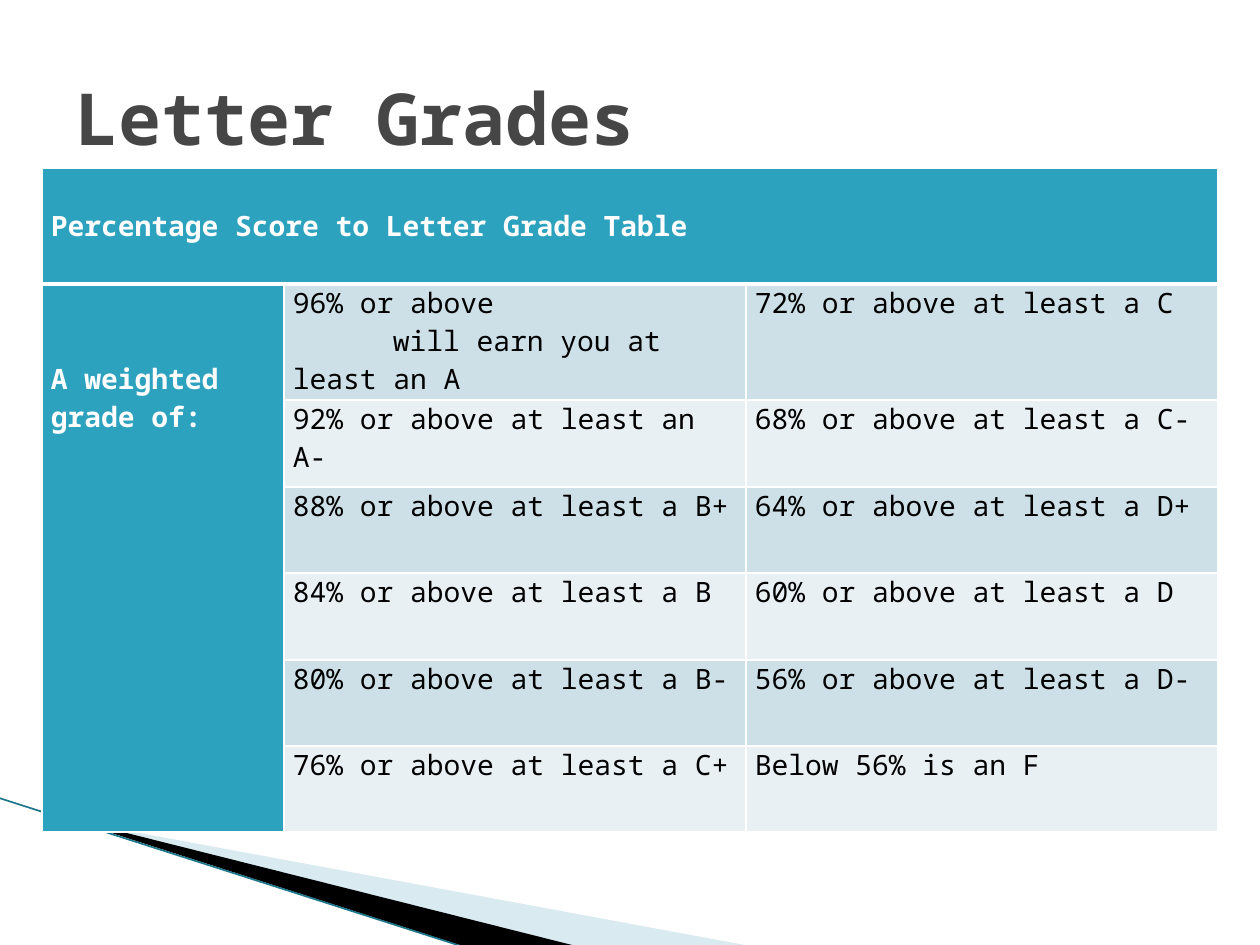
"""Build the Letter Grades slide with its score-to-grade table."""
from dataclasses import dataclass
from typing import Optional

from lxml.etree import SubElement
from pptx import Presentation
from pptx.dml.color import RGBColor
from pptx.enum.shapes import MSO_CONNECTOR as Connector
from pptx.enum.text import MSO_ANCHOR as Anchor
from pptx.oxml.ns import qn
from pptx.util import Emu, Pt

FONT = "Noto Sans Mono"
WHITE = RGBColor(0xFF, 0xFF, 0xFF)
BLACK = RGBColor(0, 0, 0)
TEAL = RGBColor(0x2D, 0xA2, 0xBF)
DARK_TEAL = RGBColor(0x1D, 0x76, 0x8A)
PALE_BLUE = RGBColor(0xA0, 0xCB, 0xDC)
TITLE_GRAY = RGBColor(0x46, 0x46, 0x46)
BANDS = (RGBColor(0xCD, 0xE0, 0xE8), RGBColor(0xE8, 0xF0, 0xF4))

EMU_PER_PX = 914400 / 126
COLUMN_WIDTHS = (242, 462, 472)
ROW_HEIGHTS = (116, 116, 87, 86, 87, 86, 86)
SIDE_MARGIN = 9
LABEL_DROP = 76
EARN_INDENT = 100

GRADES = (
    ("96% or above\nwill earn you at least an A", "72% or above at least a C"),
    ("92% or above at least an A-", "68% or above at least a C-"),
    ("88% or above at least a B+", "64% or above at least a D+"),
    ("84% or above at least a B", "60% or above at least a D"),
    ("80% or above at least a B-", "56% or above at least a D-"),
    ("76% or above at least a C+", "Below 56% is an F"),
)


@dataclass(frozen=True)
class Wedge:
    """A corner wedge, with its outline in px."""
    points: tuple
    color: RGBColor
    opacity: Optional[int] = None


WEDGES = (
    Wedge(((69, 820), (750, 946), (575, 946), (69, 819)), PALE_BLUE, 40),
    Wedge(((67, 818), (576, 946), (469, 948), (68, 819)), BLACK),
)


def px(length: int) -> Emu:
    """Turn px into EMU."""
    return Emu(round(length * EMU_PER_PX))


def style(paragraph, size: int, color: RGBColor, bold: bool) -> None:
    """Set the font of a paragraph."""
    font = paragraph.font
    font.name, font.size, font.bold = FONT, Pt(size), bold
    font.color.rgb = color


def draw_wedge(shapes, wedge: Wedge) -> None:
    """Draw one corner wedge."""
    builder = shapes.build_freeform(*wedge.points[0], scale=EMU_PER_PX)
    builder.add_line_segments(wedge.points[1:])
    outline = builder.convert_to_shape()
    outline.shadow.inherit = False
    outline.fill.solid()
    outline.fill.fore_color.rgb = wedge.color
    outline.line.fill.background()
    if wedge.opacity is not None:
        color = outline.fill._xPr.find(".//" + qn("a:srgbClr"))
        SubElement(color, qn("a:alpha"), val=str(wedge.opacity * 1000))


def draw_edge(shapes) -> None:
    """Draw the thin line along the wedges."""
    edge = shapes.add_connector(Connector.STRAIGHT, px(-1), px(798), px(467), px(948))
    edge.line.color.rgb = DARK_TEAL
    edge.line.width = Pt(0.95)
    SubElement(edge._element.spPr, qn("a:effectLst"))


def draw_title(shapes, text: str) -> None:
    """Draw the slide title."""
    title = shapes.add_textbox(px(63), px(38), px(1134), px(157)).text_frame
    title.word_wrap = True
    title.vertical_anchor = Anchor.MIDDLE
    title.text = text
    style(title.paragraphs[0], 41, TITLE_GRAY, True)


def paint_cell(cell, fill: RGBColor, bottom: int = 1) -> None:
    """Set the margins, white borders and fill of a cell."""
    cell.margin_left = cell.margin_right = px(SIDE_MARGIN)
    cell.margin_top = cell.margin_bottom = 0
    for side, width in (("L", 1), ("R", 1), ("T", 1), ("B", bottom)):
        border = SubElement(cell._tc.get_or_add_tcPr(), qn(f"a:ln{side}"), w=str(Pt(width)))
        SubElement(SubElement(border, qn("a:solidFill")), qn("a:srgbClr"), val=str(WHITE))
    cell.fill.solid()
    cell.fill.fore_color.rgb = fill


def write_cell(cell, text: str, color: RGBColor, bold: bool) -> None:
    """Write text in a cell, one paragraph a line."""
    cell.text = text
    for paragraph in cell.text_frame.paragraphs:
        style(paragraph, 16, color, bold)


def draw_table(shapes) -> None:
    """Draw the grade table."""
    table = shapes.add_table(
        len(ROW_HEIGHTS), len(COLUMN_WIDTHS), px(42), px(168),
        px(sum(COLUMN_WIDTHS)), px(sum(ROW_HEIGHTS))).table
    for column, width in zip(table.columns, COLUMN_WIDTHS):
        column.width = px(width)
    for row, height in zip(table.rows, ROW_HEIGHTS):
        row.height = px(height)

    header, label = table.cell(0, 0), table.cell(1, 0)
    header.merge(table.cell(0, 2))
    label.merge(table.cell(6, 0))
    for column in range(3):
        paint_cell(table.cell(0, column), TEAL, bottom=3)
    write_cell(header, "Percentage Score to Letter Grade Table", WHITE, True)
    header.vertical_anchor = Anchor.MIDDLE

    for row, grades in enumerate(GRADES, start=1):
        paint_cell(table.cell(row, 0), TEAL)
        for column, grade in enumerate(grades, start=1):
            cell = table.cell(row, column)
            paint_cell(cell, BANDS[(row - 1) % 2])
            write_cell(cell, grade, BLACK, False)
    write_cell(label, "A weighted grade of:", WHITE, True)
    label.margin_top = px(LABEL_DROP)
    earn_line = table.cell(1, 1).text_frame.paragraphs[1]
    earn_line._p.get_or_add_pPr().set("indent", str(px(EARN_INDENT)))


def main() -> None:
    """Build and save the slide."""
    deck = Presentation()
    deck.slide_width, deck.slide_height = px(1260), px(945)
    shapes = deck.slides.add_slide(deck.slide_layouts[6]).shapes
    for wedge in WEDGES:
        draw_wedge(shapes, wedge)
    draw_edge(shapes)
    draw_table(shapes)
    draw_title(shapes, "Letter Grades")
    deck.save("out.pptx")


if __name__ == "__main__":
    main()
